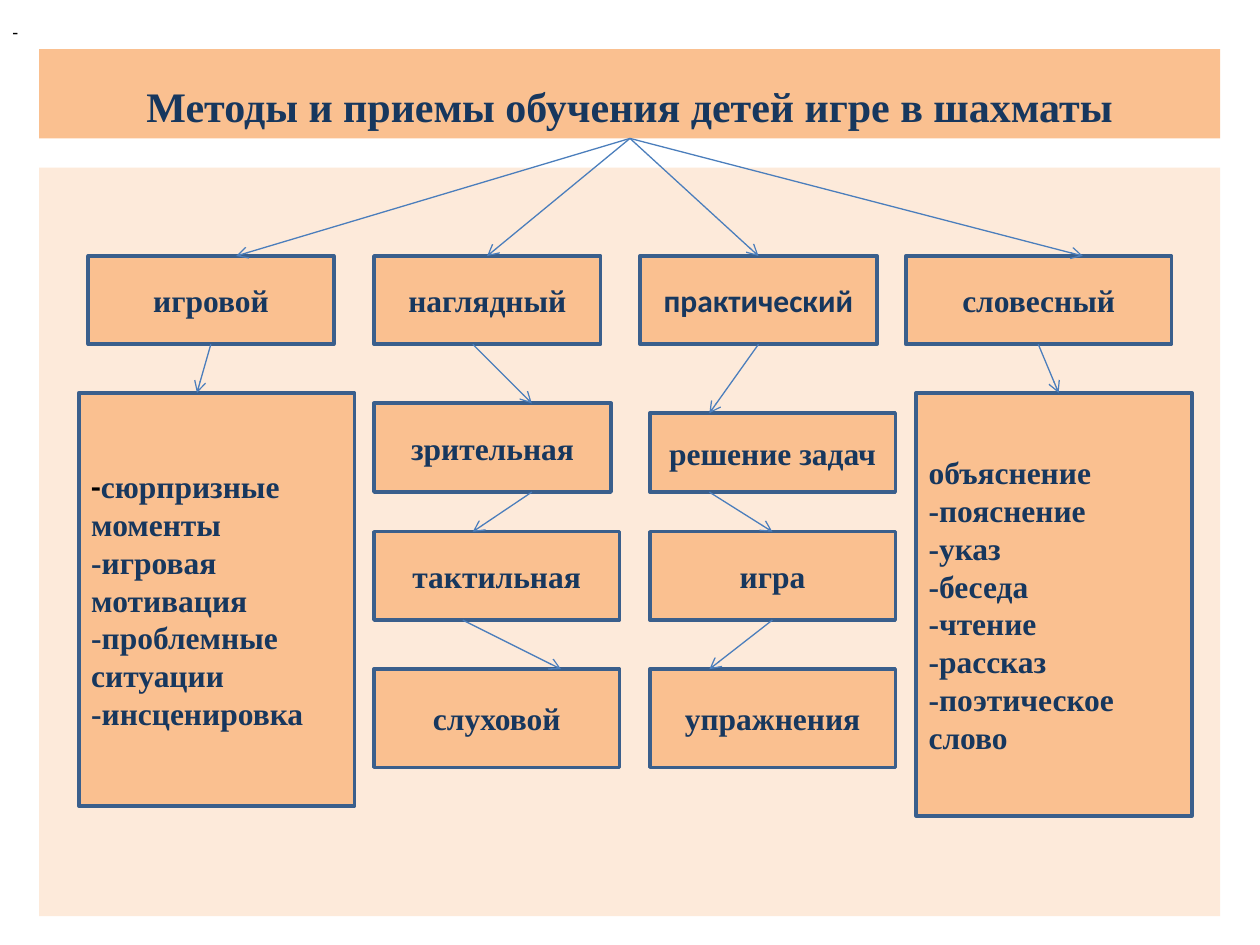
from dataclasses import dataclass

from lxml import etree
from pptx import Presentation
from pptx.dml.color import RGBColor
from pptx.enum.shapes import MSO_CONNECTOR, MSO_SHAPE
from pptx.enum.text import MSO_ANCHOR, MSO_AUTO_SIZE, PP_ALIGN
from pptx.oxml.ns import qn
from pptx.util import Cm, Pt

RECTANGLE = MSO_SHAPE.RECTANGLE
STRAIGHT = MSO_CONNECTOR.STRAIGHT
TOP, MIDDLE = MSO_ANCHOR.TOP, MSO_ANCHOR.MIDDLE
LEFT, CENTER = PP_ALIGN.LEFT, PP_ALIGN.CENTER
GROW = MSO_AUTO_SIZE.SHAPE_TO_FIT_TEXT


@dataclass(frozen=True)
class Theme:
    panel: str = "FDEADA"
    box: str = "FAC090"
    border: str = "3A5F8C"
    arrow: str = "4B7EBC"
    ink: str = "17375E"
    black: str = "000000"
    serif: str = "Times New Roman"
    sans: str = "Calibri"
    title_size: int = 24
    body_size: int = 18
    mark_size: int = 11
    border_width: float = 2
    arrow_width: float = 0.75


class Diagram:
    def __init__(self, slide, theme):
        self.slide = slide
        self.theme = theme

    def style(self, run, size, font, color, bold=True):
        run.font.size = Pt(size)
        run.font.name = font
        run.font.bold = bold
        run.font.color.rgb = RGBColor.from_string(color)

    def band(self, x, y, width, height, fill):
        band = self.slide.shapes.add_shape(
            RECTANGLE, Cm(x), Cm(y), Cm(width), Cm(height))
        band.shadow.inherit = False
        band.fill.solid()
        band.fill.fore_color.rgb = RGBColor.from_string(fill)
        band.line.fill.background()
        return band

    def title(self, text, x, y, width, height):
        frame = self.band(x, y, width, height, self.theme.box).text_frame
        frame.text = text
        frame.word_wrap = True
        frame.auto_size = GROW
        frame.vertical_anchor = TOP
        heading = frame.paragraphs[0]
        heading.alignment = CENTER
        heading.line_spacing = 1.5
        self.style(heading.runs[0], self.theme.title_size, self.theme.serif,
                   self.theme.ink)

    def box(self, text, x, y, width, height, align=CENTER, font=None):
        box = self.band(x, y, width, height, self.theme.box)
        box.line.color.rgb = RGBColor.from_string(self.theme.border)
        box.line.width = Pt(self.theme.border_width)
        frame = box.text_frame
        frame.text = text
        frame.word_wrap = True
        frame.vertical_anchor = MIDDLE
        for paragraph in frame.paragraphs:
            paragraph.alignment = align
            for run in paragraph.runs:
                self.style(run, self.theme.body_size,
                           font or self.theme.serif, self.theme.ink)
        return frame

    def black_dash(self, paragraph):
        """Set the leading dash of a paragraph apart in black."""
        words = paragraph.text[1:]
        paragraph.text = "-"
        self.style(paragraph.runs[0], self.theme.body_size, self.theme.sans,
                   self.theme.black)
        rest = paragraph.add_run()
        rest.text = words
        self.style(rest, self.theme.body_size, self.theme.serif, self.theme.ink)

    def mark(self, text, x, y, width, height):
        frame = self.slide.shapes.add_textbox(
            Cm(x), Cm(y), Cm(width), Cm(height)).text_frame
        frame.text = text
        frame.word_wrap = False
        frame.auto_size = GROW
        frame.vertical_anchor = MIDDLE
        self.style(frame.paragraphs[0].runs[0], self.theme.mark_size,
                   self.theme.sans, self.theme.black, bold=False)

    def arrow(self, x1, y1, x2, y2):
        arrow = self.slide.shapes.add_connector(
            STRAIGHT, Cm(x1), Cm(y1), Cm(x2), Cm(y2))
        arrow.line.color.rgb = RGBColor.from_string(self.theme.arrow)
        arrow.line.width = Pt(self.theme.arrow_width)
        etree.SubElement(arrow.line._get_or_add_ln(), qn("a:tailEnd"),
                         type="arrow")
        etree.SubElement(arrow._element.spPr, qn("a:effectLst"))


def main():
    presentation = Presentation()
    presentation.slide_width, presentation.slide_height = Cm(25.4), Cm(19.05)
    slide = presentation.slides.add_slide(presentation.slide_layouts[6])
    theme = Theme()
    diagram = Diagram(slide, theme)

    # Background panel, title and corner mark
    diagram.band(0.79, 3.38, 23.81, 15.09, theme.panel)
    diagram.title("Методы и приемы обучения детей игре в шахматы",
                  0.79, 0.99, 23.81, 1.8)
    diagram.mark("-", 0, 0.28, 0.64, 0.74)

    # Row of four methods
    method_top, box_height = 5.16, 1.78
    method_bottom = method_top + box_height
    for method, x, width, font in (
        ("игровой", 1.78, 4.95, theme.serif),
        ("наглядный", 7.54, 4.57, theme.serif),
        ("практический", 12.9, 4.78, theme.sans),
        ("словесный", 18.26, 5.36, theme.serif),
    ):
        diagram.box(method, x, method_top, width, box_height, font=font)

    # Technique lists of the outer methods
    list_top, list_width = 7.92, 5.56
    game_techniques = diagram.box(
        "-сюрпризные\nмоменты\n-игровая\nмотивация\n-проблемные\nситуации\n"
        "-инсценировка", 1.59, list_top, list_width, 8.33, LEFT)
    diagram.black_dash(game_techniques.paragraphs[0])
    diagram.box(
        "объяснение\n-пояснение\n-указ\n-беседа\n-чтение\n-рассказ\n"
        "-поэтическое слово", 18.47, list_top, list_width, 8.53, LEFT)

    # Step chains of the inner methods
    visual_x, practice_x, step_width = 7.54, 13.1, 4.95
    visual_top, practice_top, first_bottom = 8.13, 8.33, 9.92
    second_top, third_top = 10.72, 13.49
    second_bottom = second_top + box_height
    diagram.box("зрительная", visual_x, visual_top, 4.78,
                first_bottom - visual_top)
    diagram.box("решение задач", practice_x, practice_top, step_width,
                first_bottom - practice_top)
    for x, second, third in ((visual_x, "тактильная", "слуховой"),
                             (practice_x, "игра", "упражнения")):
        diagram.box(second, x, second_top, step_width, box_height)
        diagram.box(third, x, third_top, step_width, 1.98)

    # Arrows from the title to the methods
    for x in (4.76, 9.82, 15.29, 21.83):
        diagram.arrow(12.7, 2.79, x, method_top)

    # Arrows from the methods downwards
    for x1, x2, top in ((4.25, 3.97, list_top), (9.53, 10.72, visual_top),
                        (15.29, 14.3, practice_top), (20.93, 21.34, list_top)):
        diagram.arrow(x1, method_bottom, x2, top)

    # Arrows between the steps
    for x1, x2 in ((10.72, 9.53), (14.3, 15.57)):
        diagram.arrow(x1, first_bottom, x2, second_top)
    for x1, x2 in ((9.33, 11.31), (15.57, 14.3)):
        diagram.arrow(x1, second_bottom, x2, third_top)

    presentation.save("out.pptx")


if __name__ == "__main__":
    main()
